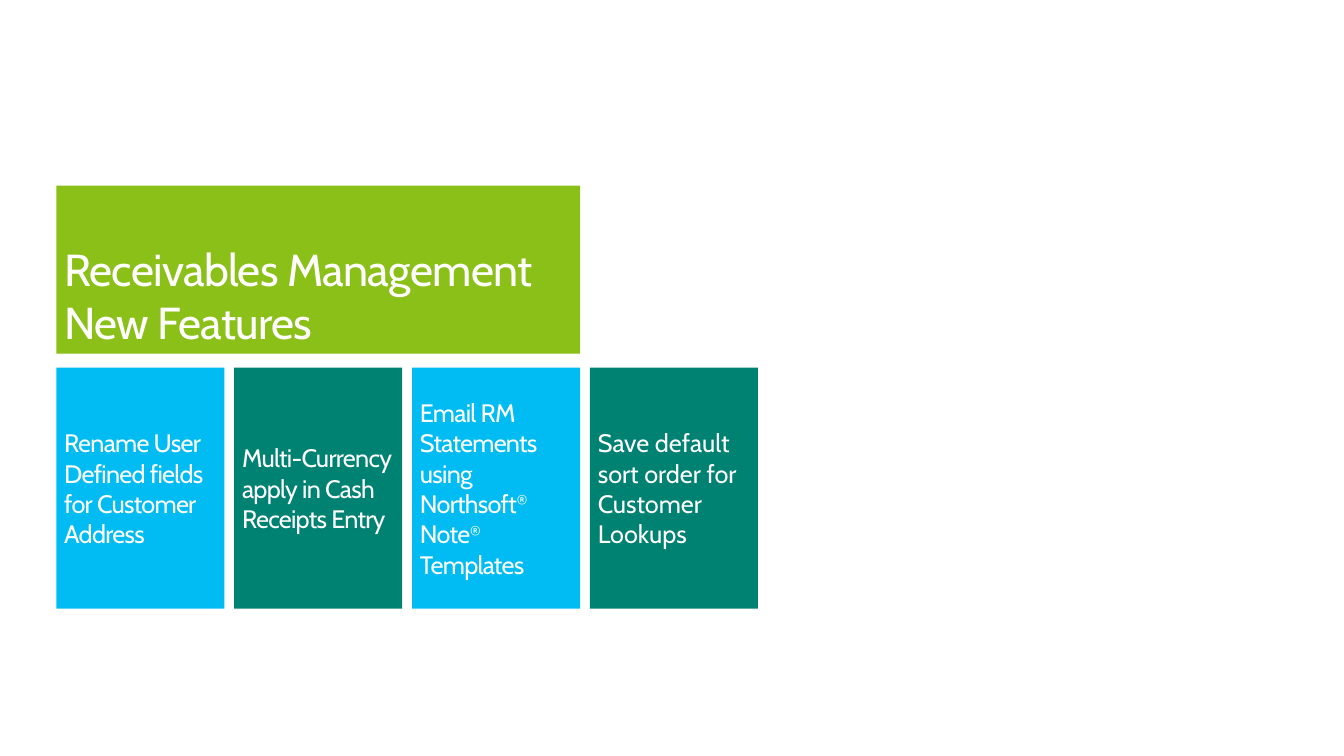
from dataclasses import dataclass

from pptx import Presentation
from pptx.dml.color import RGBColor as RGB
from pptx.enum.shapes import MSO_SHAPE as Shape
from pptx.enum.text import MSO_ANCHOR as Anchor, PP_ALIGN as Align
from pptx.util import Inches, Pt


@dataclass(frozen=True)
class Theme:
    font: str = "Cabin"
    white: RGB = RGB(0xFF, 0xFF, 0xFF)
    green: RGB = RGB(0x8B, 0xC0, 0x19)
    blue: RGB = RGB(0x00, 0xBC, 0xF2)
    teal: RGB = RGB(0x00, 0x82, 0x72)
    title: float = 32.6
    body: float = 18.4


THEME = Theme()
LEFT, TOP, SIDE, GAP = 0.57, 3.72, 1.7, 0.1
TIGHT = -50

TITLE = [[("Receivables Management", False)], [("New Features", False)]]
CARDS = [
    ([("Rename User Defined fields for Customer Address", False)], TIGHT),
    ([("Multi-Currency apply in Cash Receipts Entry", False)], TIGHT),
    ([
        ("Email RM Statements using Northsoft", False),
        ("®", True),
        (" Note", False),
        ("® ", True),
        ("Templates", False),
    ], TIGHT),
    ([("Save default sort order for Customer Lookups", False)], 0),
]


def add_run(para, text, raised, size, track):
    run = para.add_run()
    run.text = text
    run.font.name = THEME.font
    run.font.size = Pt(size)
    run.font.color.rgb = THEME.white
    props = run._r.get_or_add_rPr()
    if track:
        props.set("spc", str(track))
    if raised:
        props.set("baseline", "30000")


def add_tile(slide, box, fill, lines, size, anchor, track):
    tile = slide.shapes.add_shape(Shape.RECTANGLE, *map(Inches, box))
    tile.shadow.inherit = False
    tile.fill.solid()
    tile.fill.fore_color.rgb = fill
    tile.line.fill.background()
    frame = tile.text_frame
    frame.word_wrap = True
    frame.vertical_anchor = anchor
    frame.margin_left = frame.margin_right = Inches(0.08)
    frame.margin_top = frame.margin_bottom = Inches(0.05)
    for i, runs in enumerate(lines):
        para = frame.add_paragraph() if i else frame.paragraphs[0]
        para.alignment = Align.LEFT
        for text, raised in runs:
            add_run(para, text, raised, size, track)


def add_cards(slide):
    fills = (THEME.blue, THEME.teal)
    for i, (runs, track) in enumerate(CARDS):
        box = (LEFT + i * (SIDE + GAP), TOP, SIDE, 2.44)
        add_tile(slide, box, fills[i % 2], [runs], THEME.body, Anchor.MIDDLE, track)


def main():
    deck = Presentation()
    deck.slide_width = Inches(13.6)
    deck.slide_height = Inches(7.65)
    slide = deck.slides.add_slide(deck.slide_layouts[6])
    box = (LEFT, 1.88, 3 * SIDE + 2 * GAP, SIDE)
    add_tile(slide, box, THEME.green, TITLE, THEME.title, Anchor.BOTTOM, TIGHT)
    add_cards(slide)
    deck.save("out.pptx")


if __name__ == "__main__":
    main()
